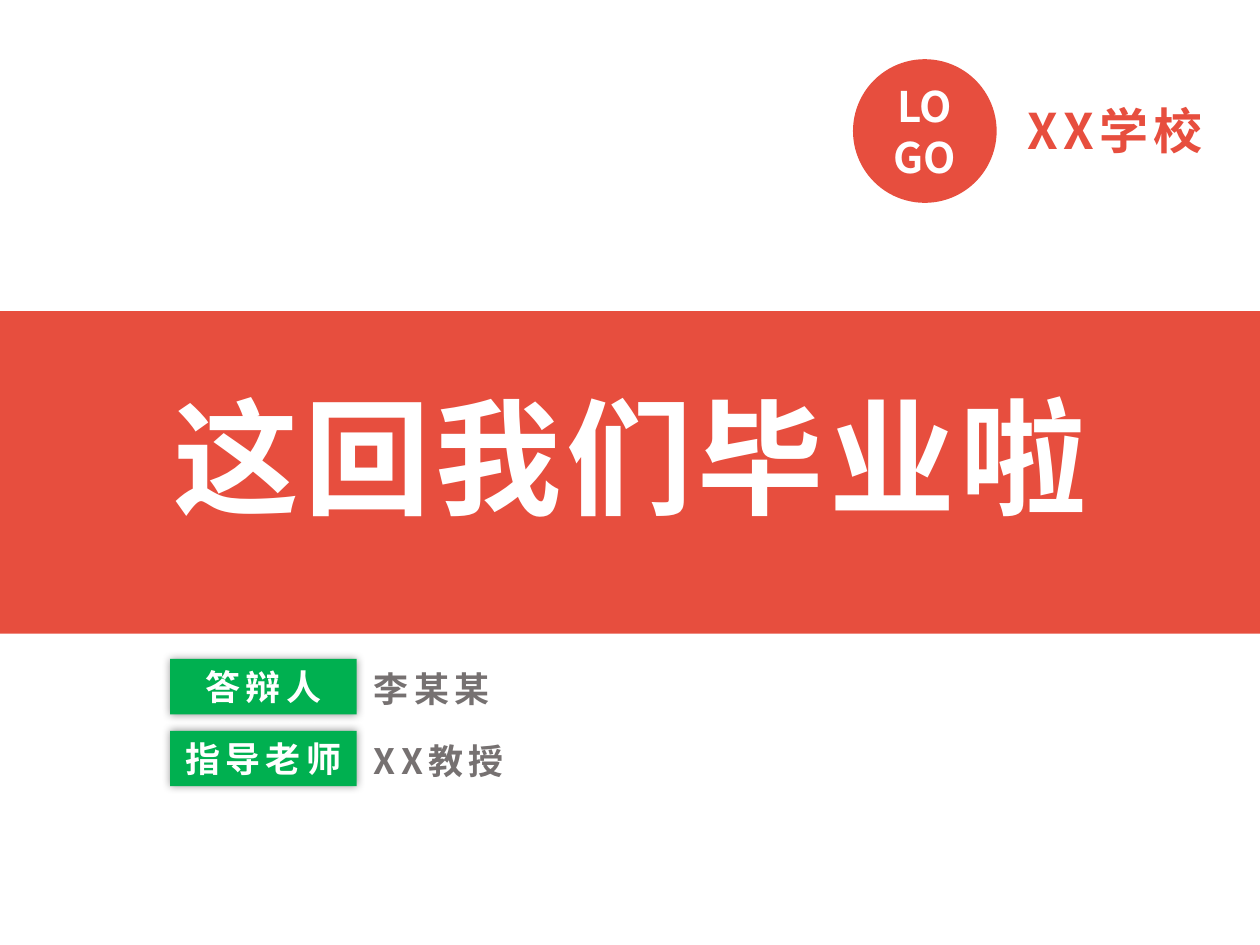
from lxml import etree
from pptx import Presentation
from pptx.dml.color import RGBColor
from pptx.enum import shapes, text
from pptx.oxml import ns
from pptx.util import Inches, Pt

FONT = "Noto Sans CJK SC"
RED = RGBColor(0xE7, 0x4E, 0x3E)
GREEN = RGBColor(0x00, 0xB0, 0x50)
GRAY = RGBColor(0x76, 0x71, 0x71)
WHITE = RGBColor(0xFF, 0xFF, 0xFF)


def write_text(shape, content, size, color, align=text.PP_ALIGN.LEFT,
               anchor=text.MSO_ANCHOR.TOP, spacing=3):
    frame = shape.text_frame
    frame.word_wrap = True
    frame.auto_size = text.MSO_AUTO_SIZE.NONE
    frame.vertical_anchor = anchor
    paragraph = frame.paragraphs[0]
    paragraph.alignment = align
    run = paragraph.add_run()
    run.text = content
    run.font.size = Pt(size)
    run.font.bold = True
    run.font.color.rgb = color
    run.font.name = FONT
    properties = run.font._element
    properties.set("spc", str(spacing * 100))
    etree.SubElement(properties, ns.qn("a:ea"), typeface=FONT)


def add_block(slide, kind, left, top, width, height, color):
    shape = slide.shapes.add_shape(
        kind, Inches(left), Inches(top), Inches(width), Inches(height))
    shape.fill.solid()
    shape.fill.fore_color.rgb = color
    shape.line.fill.background()
    shape.shadow.inherit = False
    return shape


def add_glow_shadow(shape):
    effects = shape._element.spPr.find(ns.qn("a:effectLst"))
    shadow = etree.SubElement(effects, ns.qn("a:outerShdw"),
                              blurRad=str(Pt(5)), dist="0", dir="0",
                              algn="ctr", rotWithShape="0")
    color = etree.SubElement(shadow, ns.qn("a:srgbClr"), val="000000")
    etree.SubElement(color, ns.qn("a:alpha"), val="40000")


def add_label(slide, content, left, top, width, height, size, color):
    box = slide.shapes.add_textbox(
        Inches(left), Inches(top), Inches(width), Inches(height))
    write_text(box, content, size, color)


def add_school(slide):
    badge = add_block(slide, shapes.MSO_SHAPE.OVAL, 6.77, 0.47, 1.14, 1.14, RED)
    write_text(badge, "LOGO", 24, WHITE, align=text.PP_ALIGN.CENTER,
               anchor=text.MSO_ANCHOR.MIDDLE, spacing=0)
    add_label(slide, "XX学校", 8.06, 0.75, 1.77, 0.57, 28, RED)


def add_title(slide):
    add_block(slide, shapes.MSO_SHAPE.RECTANGLE, 0, 2.47, 10, 2.56, RED)
    title = slide.shapes.title
    title.left, title.top = Inches(1.16), Inches(2.96)
    title.width, title.height = Inches(7.68), Inches(1.31)
    write_text(title, "这回我们毕业啦", 72, WHITE, align=text.PP_ALIGN.CENTER)
    slide.shapes._spTree.append(title._element)


def add_person(slide, role, name, top):
    tag = add_block(slide, shapes.MSO_SHAPE.RECTANGLE, 1.35, top, 1.48, 0.44, GREEN)
    add_glow_shadow(tag)
    write_text(tag, role, 20, WHITE, align=text.PP_ALIGN.CENTER,
               anchor=text.MSO_ANCHOR.MIDDLE)
    add_label(slide, name, 2.87, top + 0.02, 1.77, 0.44, 20, GRAY)


def main():
    presentation = Presentation()
    presentation.slide_width = Inches(10)
    presentation.slide_height = Inches(7.5)
    slide = presentation.slides.add_slide(presentation.slide_layouts[5])
    add_school(slide)
    add_title(slide)
    people = [("答辩人", "李某某"), ("指导老师", "XX教授")]
    for row, (role, name) in enumerate(people):
        add_person(slide, role, name, 5.23 + row * 0.57)
    presentation.save("out.pptx")


if __name__ == "__main__":
    main()
